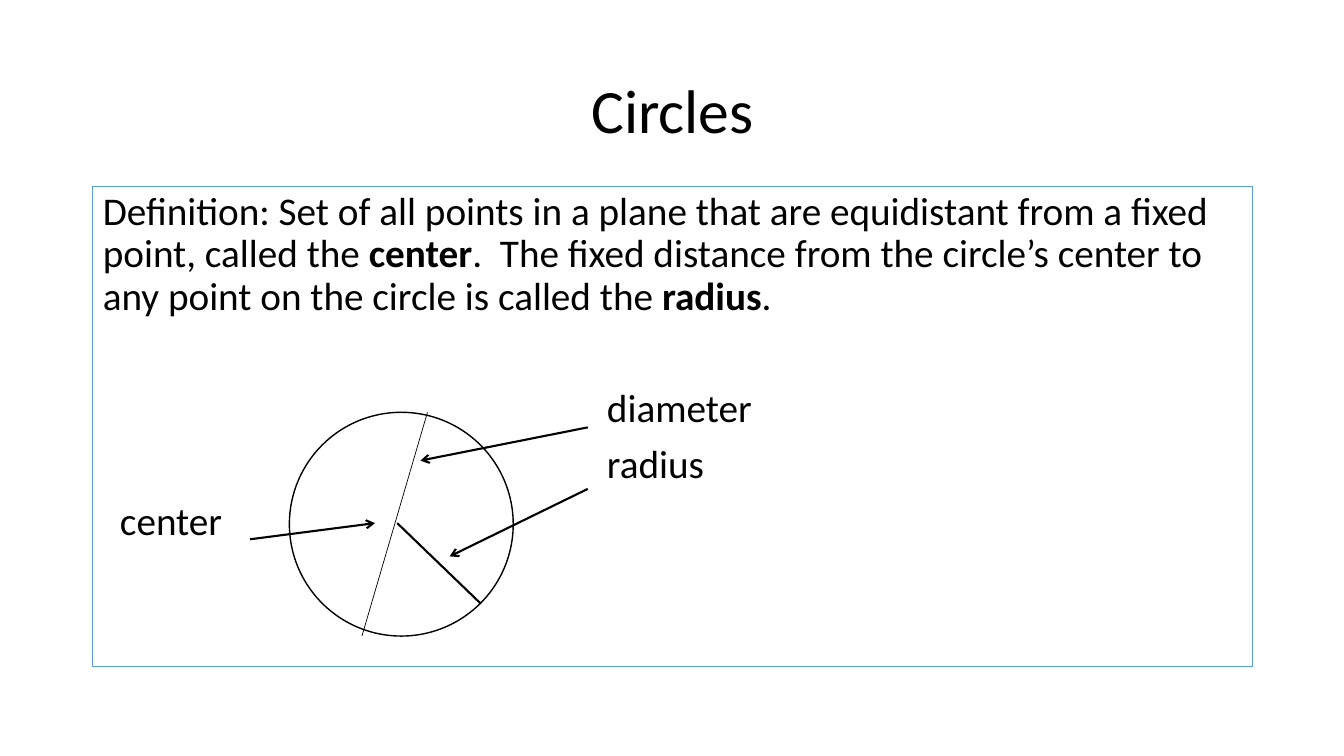
from dataclasses import dataclass

from lxml.etree import SubElement
from pptx import Presentation
from pptx.dml.color import RGBColor
from pptx.enum.shapes import MSO_CONNECTOR as Link, MSO_SHAPE as Shape
from pptx.enum.text import MSO_ANCHOR as Anchor, MSO_AUTO_SIZE as Fit, PP_ALIGN as Align
from pptx.oxml.ns import qn
from pptx.util import Inches, Pt

BLACK = "000000"
BLUE = "5B9BD5"


@dataclass
class Line:
    start: tuple[float, float]
    end: tuple[float, float]
    width: float = 1.5
    arrow: bool = False


@dataclass
class Label:
    text: str
    indent: float
    before: float = 10


LINES = [
    Line((3.94, 5.19), (4.77, 5.99)),
    Line((5.83, 4.85), (4.46, 5.52), arrow=True),
    Line((2.48, 5.35), (3.72, 5.19), arrow=True),
    Line((4.24, 4.09), (3.59, 6.31), width=0.5),
    Line((5.83, 4.24), (4.17, 4.57), arrow=True),
]
LABELS = [
    Label("diameter", 5, before=50),
    Label("radius", 5),
    Label("center", 0.17),
]
MEANING = [
    ("Definition: Set of all points in a plane that are equidistant from a fixed point, called the ", False),
    ("center", True),
    (".  The fixed distance from the circle’s center to any point on the circle is called the ", False),
    ("radius", True),
    (".", False),
]


def color(code: str) -> RGBColor:
    return RGBColor.from_string(code)


def place(shape, left: float, top: float, width: float, height: float) -> None:
    shape.left, shape.top = Inches(left), Inches(top)
    shape.width, shape.height = Inches(width), Inches(height)


def stroke(shape, code: str, width: float) -> None:
    shape.line.color.rgb = color(code)
    shape.line.width = Pt(width)


def write(para, text: str, *, size: float = 28, bold: bool = False) -> None:
    run = para.add_run()
    run.text = text
    font = run.font
    font.name, font.size, font.bold = "Calibri", Pt(size), bold
    font.color.rgb = color(BLACK)


def layout(para, align: Align = Align.LEFT, before: float = 10, indent: float = 0) -> None:
    """Set spacing, alignment and left margin, without a bullet."""
    para.alignment = align
    para.line_spacing = 0.9
    para.space_before = Pt(before)
    props = para._p.get_or_add_pPr()
    props.set("marL", str(Inches(indent)))
    props.set("indent", "0")
    SubElement(props, qn("a:buNone"))


def draw(slide, item: Line) -> None:
    ends = [Inches(n) for n in (*item.start, *item.end)]
    link = slide.shapes.add_connector(Link.STRAIGHT, *ends)
    stroke(link, BLACK, item.width)
    if item.arrow:
        SubElement(link.line._get_or_add_ln(), qn("a:tailEnd"), type="arrow")
    SubElement(link._element.spPr, qn("a:effectLst"))


def main() -> None:
    deck = Presentation()
    deck.slide_width, deck.slide_height = Inches(13.33), Inches(7.5)
    slide = deck.slides.add_slide(deck.slide_layouts[1])
    title, body = slide.placeholders

    place(title, 0.92, 0.4, 11.5, 1.45)
    title.text_frame.auto_size = Fit.NONE
    title.text_frame.vertical_anchor = Anchor.MIDDLE
    head = title.text_frame.paragraphs[0]
    layout(head, Align.CENTER, before=0)
    write(head, "Circles", size=44)

    place(body, 0.92, 1.85, 11.5, 4.76)
    stroke(body, BLUE, 0.75)
    frame = body.text_frame
    frame.auto_size = Fit.NONE
    frame.vertical_anchor = Anchor.TOP
    para = frame.paragraphs[0]
    layout(para)
    for text, bold in MEANING:
        write(para, text, bold=bold)
    for label in LABELS:
        para = frame.add_paragraph()
        layout(para, before=label.before, indent=label.indent)
        write(para, label.text)

    box = [Inches(n) for n in (2.87, 4.09, 2.22, 2.22)]
    circle = slide.shapes.add_shape(Shape.OVAL, *box)
    circle.shadow.inherit = False
    circle.fill.background()
    stroke(circle, BLACK, 1)
    for item in LINES:
        draw(slide, item)

    deck.save("out.pptx")


if __name__ == "__main__":
    main()
